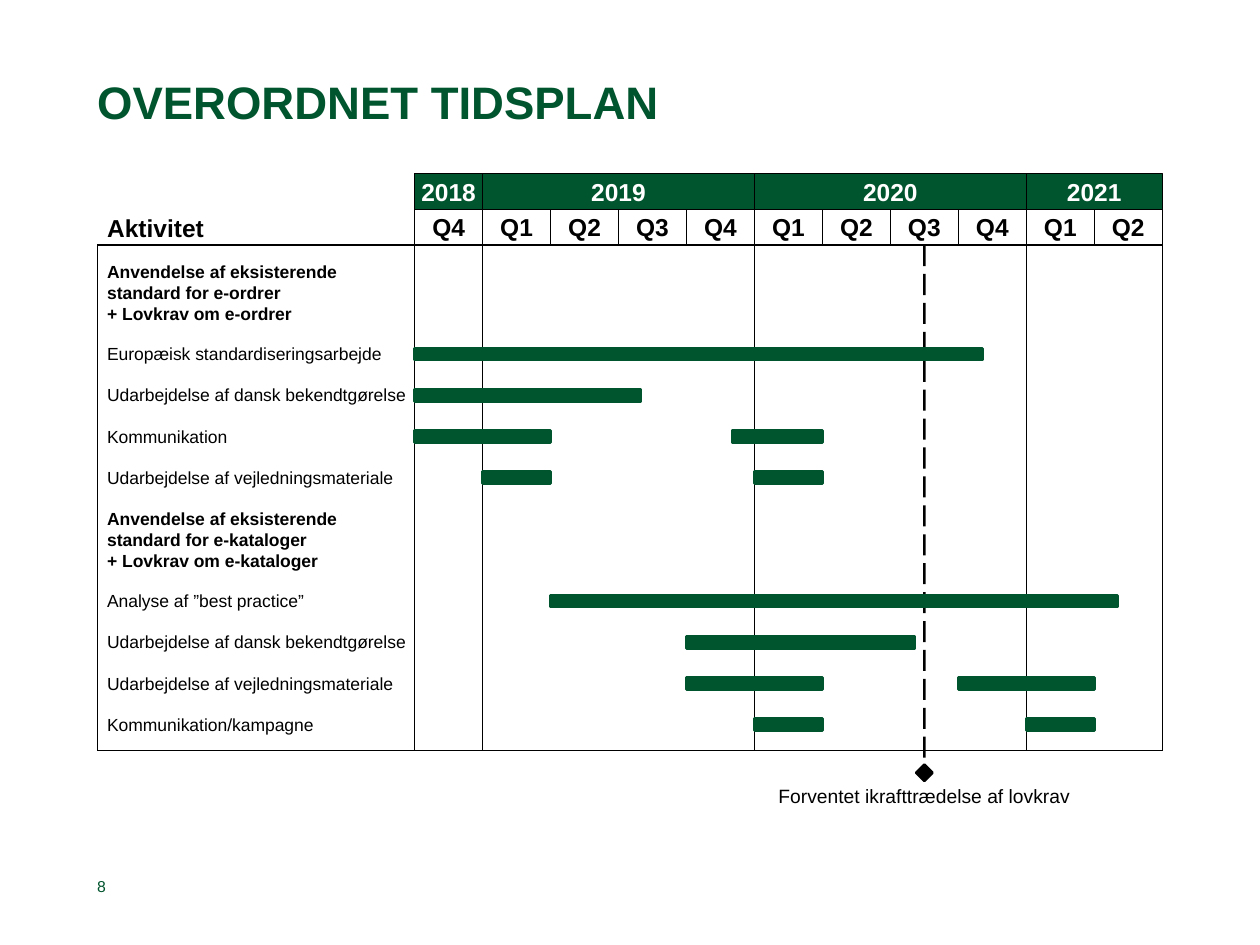
import dataclasses

import pptx
import pptx.dml.color
import pptx.enum.dml
import pptx.enum.shapes
import pptx.enum.text
import pptx.oxml
import pptx.oxml.ns
import pptx.util

Cm = pptx.util.Cm
Pt = pptx.util.Pt
SHAPE = pptx.enum.shapes.MSO_SHAPE
ANCHOR = pptx.enum.text.MSO_ANCHOR
ALIGN = pptx.enum.text.PP_ALIGN


@dataclasses.dataclass(frozen=True)
class Theme:
    font: str = "Arial"
    green: str = "00542E"
    black: str = "000000"
    white: str = "FFFFFF"
    title: float = 26
    header: float = 14
    caption: float = 11
    label: float = 10
    number: float = 9
    thin: float = 0.25
    frame: float = 0.75
    heavy: float = 1.5


THEME = Theme()

LEFT, LABEL_X, GRID_X, QUARTER = 1.96, 2.16, 8.36, 1.37
HEAD_Y, HEAD_H = 3.5, 0.72
GRID_Y, GRID_BOTTOM = HEAD_Y + 2 * HEAD_H, 15.13
ROW_Y, ROW_H, LINE_H = 5.26, 0.83, 0.42
BAR_H, BAR_DROP = 0.24, 0.1
MILESTONE_Y, MILESTONE_SIZE = 15.58, 0.33
MILESTONE_QUARTER = 7

YEARS = [("2018", ["Q4"]), ("2019", ["Q1", "Q2", "Q3", "Q4"]),
         ("2020", ["Q1", "Q2", "Q3", "Q4"]), ("2021", ["Q1", "Q2"])]

PHASES = [
    (["Anvendelse af eksisterende", "standard for e-ordrer", "+ Lovkrav om e-ordrer"],
     [("Europæisk standardiseringsarbejde", [(0, 8.36)]),
      ("Udarbejdelse af dansk bekendtgørelse", [(0, 3.33)]),
      ("Kommunikation", [(0, 2), (4.67, 6)]),
      ("Udarbejdelse af vejledningsmateriale", [(1, 2), (5, 6)])]),
    (["Anvendelse af eksisterende", "standard for e-kataloger", "+ Lovkrav om e-kataloger"],
     [("Analyse af ”best practice”", [(2, 10.34)]),
      ("Udarbejdelse af dansk bekendtgørelse", [(4, 7.36)]),
      ("Udarbejdelse af vejledningsmateriale", [(4, 6), (8, 10)]),
      ("Kommunikation/kampagne", [(5, 6), (9, 10)])]),
]


def rgb(value):
    return pptx.dml.color.RGBColor.from_string(value)


def quarter_x(q):
    return GRID_X + QUARTER * q


def write(sp, lines, size, color, bold=False, align=ALIGN.LEFT,
          anchor=ANCHOR.TOP, wrap=True, pad=0):
    tf = sp.text_frame
    tf.margin_left = tf.margin_right = 0
    tf.margin_top = tf.margin_bottom = Cm(pad)
    tf.word_wrap = wrap
    tf.vertical_anchor = anchor
    for i, line in enumerate(lines):
        p = tf.paragraphs[0] if i == 0 else tf.add_paragraph()
        p.alignment = align
        r = p.add_run()
        r.text = line
        r.font.name = THEME.font
        r.font.size = Pt(size)
        r.font.bold = bold
        r.font.color.rgb = rgb(color)


def add_text(s, x, y, w, h, lines, size, color, **style):
    sp = s.shapes.add_textbox(Cm(x), Cm(y), Cm(w), Cm(h))
    write(sp, lines, size, color, **style)


def add_box(s, kind, x, y, w, h, fill, line, width):
    sp = s.shapes.add_shape(kind, Cm(x), Cm(y), Cm(w), Cm(h))
    sp.shadow.inherit = False
    if fill:
        sp.fill.solid()
        sp.fill.fore_color.rgb = rgb(fill)
    else:
        sp.fill.background()
    sp.line.color.rgb = rgb(line)
    sp.line.width = Pt(width)
    return sp


def add_header(s, start, span, row, text, fill, color):
    sp = add_box(s, SHAPE.RECTANGLE, quarter_x(start), HEAD_Y + row * HEAD_H,
                 span * QUARTER, HEAD_H, fill, THEME.black, THEME.frame)
    write(sp, [text], THEME.header, color, bold=True, align=ALIGN.CENTER,
          anchor=ANCHOR.MIDDLE, wrap=False, pad=0.08)
    return sp


def add_line(s, x1, y1, x2, y2, width):
    cxn = s.shapes.add_connector(pptx.enum.shapes.MSO_CONNECTOR.STRAIGHT,
                                 Cm(x1), Cm(y1), Cm(x2), Cm(y2))
    cxn.line.color.rgb = rgb(THEME.black)
    cxn.line.width = Pt(width)
    cxn._element.spPr.append(pptx.oxml.parse_xml(
        f'<a:effectLst {pptx.oxml.ns.nsdecls("a")}/>'))
    return cxn


def add_title(s, text):
    sp = s.shapes.title
    sp.left, sp.top, sp.width, sp.height = Cm(LEFT), Cm(1.5), Cm(21.48), Cm(2.56)
    write(sp, [text], THEME.title, THEME.green, bold=True)


def add_calendar(s):
    starts, quarters = [], []
    for year, names in YEARS:
        starts.append(len(quarters))
        add_header(s, starts[-1], len(names), 0, year, THEME.green, THEME.white)
        for name in names:
            quarters.append(add_header(s, len(quarters), 1, 1, name, None, THEME.black))
    right = quarter_x(len(quarters))
    for x in (LEFT, GRID_X, right):
        add_line(s, x, GRID_Y, x, GRID_BOTTOM, THEME.frame)
    for start in starts[1:]:
        add_line(s, quarter_x(start), GRID_Y, quarter_x(start), GRID_BOTTOM, THEME.thin)
    for y in (GRID_Y, GRID_BOTTOM):
        add_line(s, LEFT, y, right, y, THEME.frame)
    return quarters


def add_milestone(s, quarter, text):
    x = quarter_x(MILESTONE_QUARTER + 0.5)
    cxn = add_line(s, x, GRID_Y, x, MILESTONE_Y, THEME.heavy)
    cxn.line.dash_style = pptx.enum.dml.MSO_LINE.LONG_DASH
    cxn.begin_connect(quarter, 2)
    half = MILESTONE_SIZE / 2
    add_box(s, SHAPE.DIAMOND, x - half, MILESTONE_Y - half, MILESTONE_SIZE,
            MILESTONE_SIZE, THEME.black, THEME.black, THEME.heavy)
    add_text(s, x - 3, 15.82, 6, 0.46, [text], THEME.caption, THEME.black,
             align=ALIGN.CENTER)


def add_label(s, y, lines, bold=False):
    add_text(s, LABEL_X, y, GRID_X - LABEL_X, LINE_H * len(lines), lines,
             THEME.label, THEME.black, bold=bold)


def add_phases(s):
    y = ROW_Y
    for heading, activities in PHASES:
        add_label(s, y, heading, bold=True)
        y += 2 * ROW_H
        for name, bars in activities:
            add_label(s, y, [name])
            for start, end in bars:
                add_box(s, SHAPE.RECTANGLE, quarter_x(start), y + BAR_DROP,
                        (end - start) * QUARTER, BAR_H,
                        THEME.green, THEME.green, THEME.heavy)
            y += ROW_H


def main():
    prs = pptx.Presentation()
    prs.slide_width, prs.slide_height = Cm(25.4), Cm(19.05)
    s = prs.slides.add_slide(prs.slide_layouts[5])
    add_title(s, "OVERORDNET TIDSPLAN")
    quarters = add_calendar(s)
    add_milestone(s, quarters[MILESTONE_QUARTER], "Forventet ikrafttrædelse af lovkrav")
    add_text(s, LABEL_X, 4.29, GRID_X - LABEL_X, 0.59, ["Aktivitet"], THEME.header,
             THEME.black, bold=True, anchor=ANCHOR.BOTTOM)
    add_phases(s)
    add_text(s, LEFT, 17.58, 0.91, 0.48, ["8"], THEME.number, THEME.green,
             anchor=ANCHOR.BOTTOM)
    prs.save("out.pptx")


if __name__ == "__main__":
    main()
